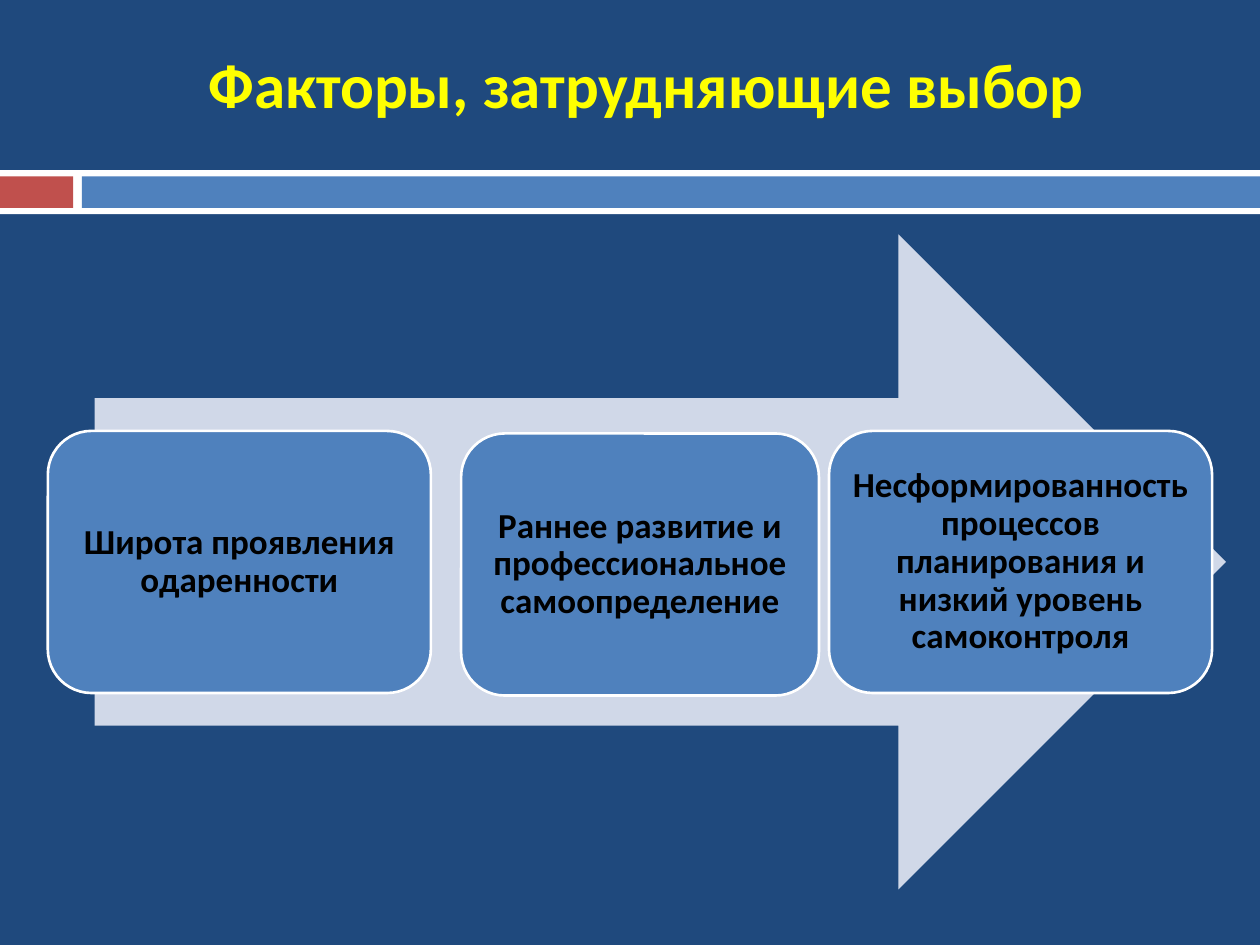
import dataclasses
import pptx
import pptx.dml.color
import pptx.enum.shapes
import pptx.enum.text
import pptx.util

COLS, ROWS = 100, 75
KIND = pptx.enum.shapes.MSO_SHAPE
WHITE, BLUE = "FFFFFF", "4F81BD"


@dataclasses.dataclass
class Area:
    left: float
    top: float
    width: float
    height: float


@dataclasses.dataclass
class Panel:
    area: Area
    fill: str
    kind: int = KIND.RECTANGLE
    edge: str = ""
    text: str = ""


BAND = [
    Panel(Area(0, 13.5, 100, 3.5), WHITE),
    Panel(Area(0, 14, 5.8, 2.5), "C0504D"),
    Panel(Area(6.5, 14, 93.5, 2.5), BLUE),
]
ARROW = Panel(Area(7.5, 18.6, 89.8, 52), "D0D8E8", KIND.RIGHT_ARROW)
FACTORS = [
    (3.8, 34.2, 30.4, "Широта проявления одаренности"),
    (36.6, 34.4, 28.4, "Раннее развитие и профессиональное самоопределение"),
    (65.8, 34.2, 30.4, "Несформированность процессов планирования и низкий уровень самоконтроля"),
]
CARDS = [
    Panel(Area(left, top, width, 20.8), BLUE, KIND.ROUNDED_RECTANGLE, WHITE, text)
    for left, top, width, text in FACTORS
]


def shade(code: str) -> pptx.dml.color.RGBColor:
    return pptx.dml.color.RGBColor.from_string(code)


def place(deck, area: Area) -> tuple[int, int, int, int]:
    col, row = deck.slide_width / COLS, deck.slide_height / ROWS
    return (round(area.left * col), round(area.top * row),
            round(area.width * col), round(area.height * row))


def write(frame, text: str, size: int, color: str, pitch: float = 1.0) -> None:
    frame.word_wrap = True
    frame.vertical_anchor = pptx.enum.text.MSO_ANCHOR.MIDDLE
    line = frame.paragraphs[0]
    line.alignment = pptx.enum.text.PP_ALIGN.CENTER
    line.line_spacing = pitch
    run = line.add_run()
    run.text = text
    run.font.name = "Calibri"
    run.font.size = pptx.util.Pt(size)
    run.font.bold = True
    run.font.color.rgb = shade(color)


def draw(deck, slide, panel: Panel) -> None:
    shape = slide.shapes.add_shape(panel.kind, *place(deck, panel.area))
    shape.shadow.inherit = False
    shape.fill.solid()
    shape.fill.fore_color.rgb = shade(panel.fill)
    if panel.edge:
        shape.line.color.rgb = shade(panel.edge)
        shape.line.width = pptx.util.Pt(1.5)
    else:
        shape.line.fill.background()
    if panel.text:
        frame = shape.text_frame
        frame.margin_left = frame.margin_right = pptx.util.Inches(0.08)
        frame.margin_top = frame.margin_bottom = pptx.util.Inches(0.08)
        write(frame, panel.text, 20, "000000", 0.9)


def main() -> None:
    deck = pptx.Presentation()
    deck.slide_width = pptx.util.Inches(10)
    deck.slide_height = pptx.util.Inches(7.5)
    slide = deck.slides.add_slide(deck.slide_layouts[6])
    slide.background.fill.solid()
    slide.background.fill.fore_color.rgb = shade("1F497D")
    for panel in BAND:
        draw(deck, slide, panel)
    title = slide.shapes.add_textbox(*place(deck, Area(6.7, 2.5, 89.2, 8.2)))
    write(title.text_frame, "Факторы, затрудняющие выбор", 36, "FFFF00")
    for panel in [ARROW, *CARDS]:
        draw(deck, slide, panel)
    deck.save("out.pptx")


if __name__ == "__main__":
    main()
